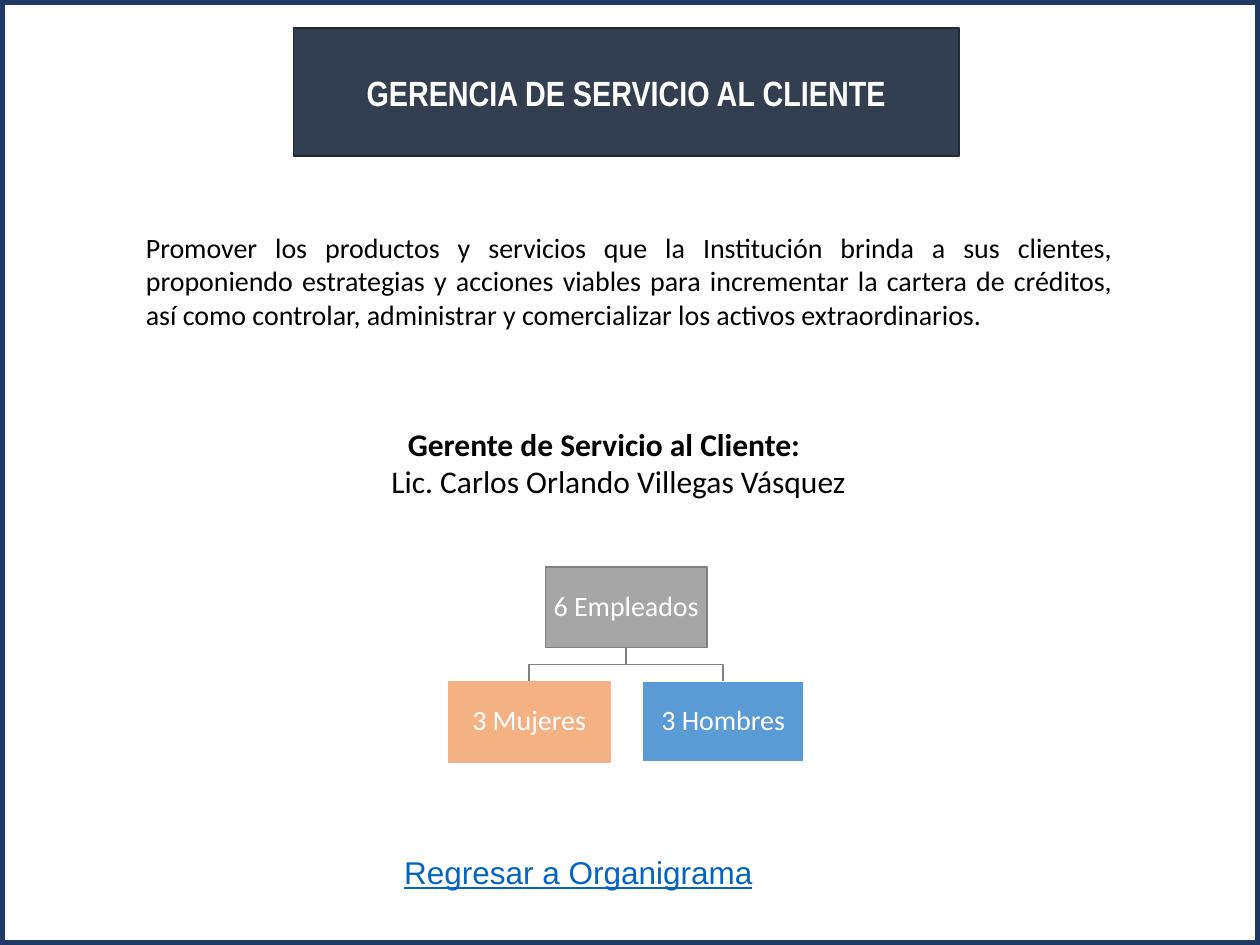
from pptx import Presentation
from pptx.dml.color import RGBColor
from pptx.enum.shapes import MSO_SHAPE
from pptx.enum.text import MSO_ANCHOR, MSO_AUTO_SIZE, PP_ALIGN
from pptx.util import Inches, Pt

HUES = {
    "frame": "203864", "band": "333F50", "edge": "222A35",
    "white": "FFFFFF", "black": "000000", "link": "0563C1",
    "gray": "A6A6A6", "line": "808080", "peach": "F4B183", "blue": "5B9BD5",
}


def hue(name):
    return RGBColor.from_string(HUES[name])


class Deck:
    font = "Calibri"

    def __init__(self, show):
        self.slide = show.slides.add_slide(show.slide_layouts[5])

    def place(self, shape, box):
        shape.left, shape.top, shape.width, shape.height = map(Inches, box)

    def paint(self, shape, fill, line, width=1):
        if fill:
            shape.fill.solid()
            shape.fill.fore_color.rgb = hue(fill)
        else:
            shape.fill.background()
        shape.line.color.rgb = hue(line)
        shape.line.width = Pt(width)

    def label(self, para, text, size, color="black", align=PP_ALIGN.CENTER,
              font=None, bold=False, under=False):
        para.text = text
        para.alignment = align
        for run in para.runs:
            run.font.name = font or self.font
            run.font.size = Pt(size)
            run.font.bold = bold
            run.font.underline = under
            run.font.color.rgb = hue(color)

    def title(self, text, box):
        shape = self.slide.shapes.title
        self.place(shape, box)
        self.paint(shape, "band", "edge")
        frame = shape.text_frame
        frame.auto_size = MSO_AUTO_SIZE.NONE
        frame.vertical_anchor = MSO_ANCHOR.MIDDLE
        self.label(frame.paragraphs[0], text, 20, "white",
                   font="Arial Narrow", bold=True)

    def rect(self, box, fill, line, width=1):
        shape = self.slide.shapes.add_shape(
            MSO_SHAPE.RECTANGLE, *map(Inches, box))
        shape.shadow.inherit = False
        self.paint(shape, fill, line, width)
        return shape

    def node(self, text, box, fill, line):
        frame = self.rect(box, fill, line).text_frame
        frame.word_wrap = True
        frame.vertical_anchor = MSO_ANCHOR.MIDDLE
        frame.margin_left = frame.margin_right = Inches(0.01)
        frame.margin_top = frame.margin_bottom = Inches(0.01)
        para = frame.paragraphs[0]
        self.label(para, text, 16, "white")
        para.line_spacing = 0.9

    def text(self, box, text, size, **style):
        shape = self.slide.shapes.add_textbox(*map(Inches, box))
        frame = shape.text_frame
        frame.word_wrap = True
        self.label(frame.paragraphs[0], text, size, **style)
        return frame

    def branch(self, start, end):
        (x1, y1), (x2, y2) = start, end
        mid = (y1 + y2) / 2
        line = self.slide.shapes.build_freeform(Inches(x1), Inches(y1))
        line.add_line_segments(
            [(Inches(x), Inches(y)) for x, y in ((x1, mid), (x2, mid), end)],
            close=False)
        shape = line.convert_to_shape()
        shape.shadow.inherit = False
        self.paint(shape, None, "line")


def main():
    show = Presentation()
    show.slide_width, show.slide_height = Inches(10), Inches(7.5)
    deck = Deck(show)

    # Frame and title
    deck.rect((0, 0, 10, 7.5), None, "frame", 6)
    deck.title("GERENCIA DE SERVICIO AL CLIENTE", (2.33, 0.22, 5.28, 1.02))

    # Purpose
    deck.text((1.06, 1.78, 7.87, 0.94),
              "Promover los productos y servicios que la Institución brinda a "
              "sus clientes, proponiendo estrategias y acciones viables para "
              "incrementar la cartera de créditos, así como controlar, "
              "administrar y comercializar los activos extraordinarios.",
              16, align=PP_ALIGN.JUSTIFY)

    # Manager, with right indents that shift the centred lines
    boss = deck.text((2.91, 3.32, 4.06, 0.71),
                     "Gerente de Servicio al Cliente:", 18, bold=True)
    deck.label(boss.add_paragraph(), "Lic. Carlos Orlando Villegas Vásquez", 18)
    for para, gap in zip(boss.paragraphs, (0.29, 0.06)):
        para._p.get_or_add_pPr().set("marR", str(Inches(gap)))

    # Staff tree
    wide, high, mid, top, low = 1.28, 0.64, 4.97, 4.5, 5.41
    step = 0.77
    staff = [("3 Mujeres", mid - step, "peach", "peach"),
             ("3 Hombres", mid + step, "blue", "white")]
    for _, x, _, _ in staff:
        deck.branch((mid, top + high), (x, low))
    deck.node("6 Empleados", (mid - wide / 2, top, wide, high), "gray", "line")
    for text, x, fill, line in staff:
        deck.node(text, (x - wide / 2, low, wide, high), fill, line)

    # Return line
    deck.text((3.11, 6.72, 3.27, 0.4), "Regresar a Organigrama", 18,
              color="link", align=PP_ALIGN.LEFT, font="Arial", under=True)

    show.save("out.pptx")


if __name__ == "__main__":
    main()
